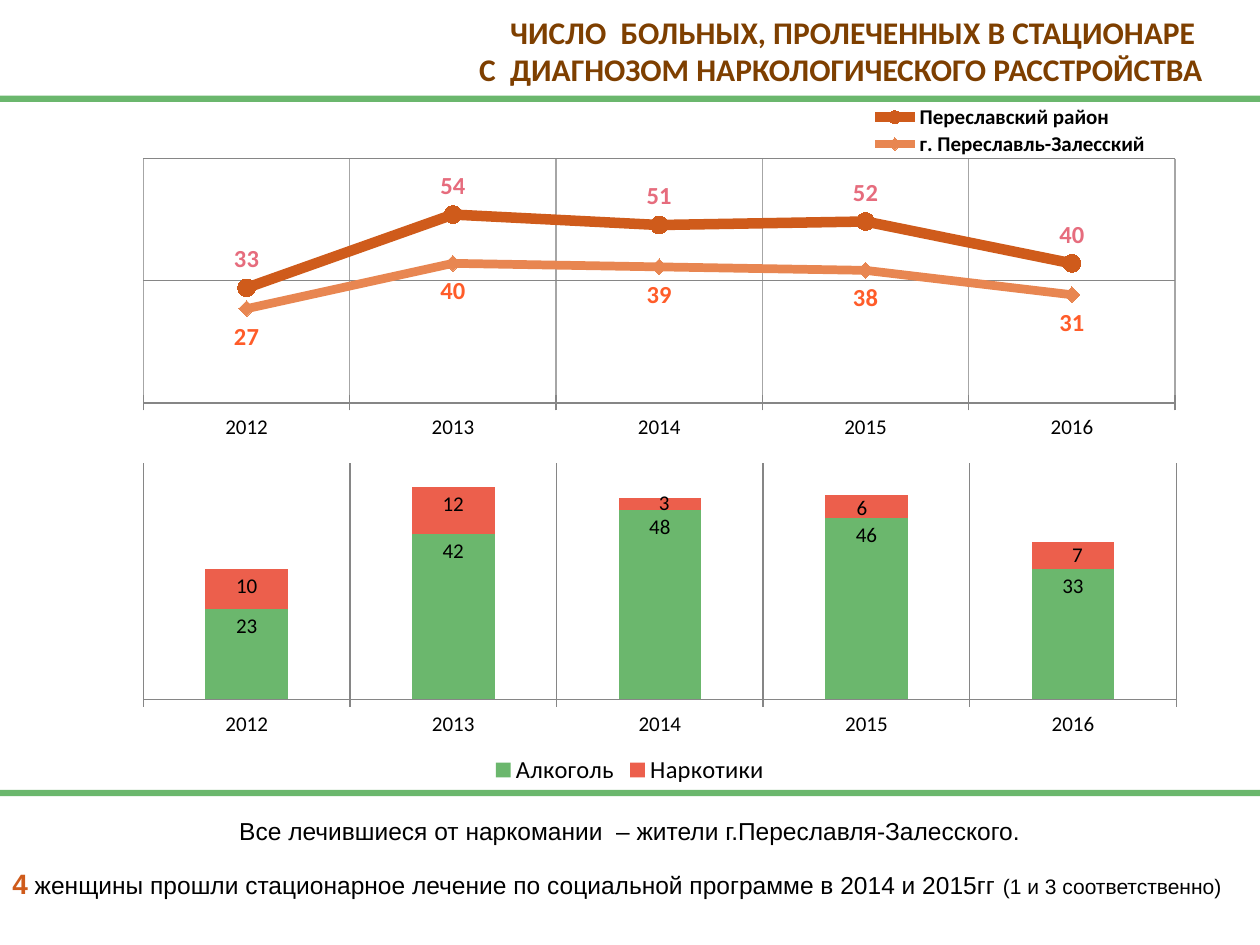
"""Builds the slide on inpatients treated for narcological disorders, 2012-2016."""
from lxml import etree
from pptx import Presentation
from pptx import util as u
from pptx.chart.data import CategoryChartData
from pptx.dml.color import RGBColor
from pptx.enum import chart as c, shapes, text
from pptx.oxml import parse_xml
from pptx.oxml.ns import nsdecls

Pt = u.Pt
GREEN, RED, GREY, BLACK = "6BB76D", "EC5F4C", "868686", "000000"
BROWN, ORANGE, PEACH = "7E3F00", "CF5B1B", "E88651"
YEARS = ["2012", "2013", "2014", "2015", "2016"]


def style(font, size, color=BLACK, bold=False, name="Calibri"):
    """Set a font's size, colour, weight and typeface."""
    font.size, font.bold, font.name = Pt(size), bold, name
    font.color.rgb = RGBColor.from_string(color)


def layout(x, y, width=None, height=None, target=None):
    """Return a manual chart layout; without a size it is an offset."""
    parts = []
    if target:
        parts.append(f'<c:layoutTarget val="{target}"/>')
    if width:
        parts.append('<c:xMode val="edge"/><c:yMode val="edge"/>')
    sizes = {"x": x, "y": y, "w": width, "h": height}
    parts += [f'<c:{key} val="{value}"/>' for key, value in sizes.items() if value is not None]
    return parse_xml(f'<c:layout {nsdecls("c")}><c:manualLayout>{"".join(parts)}</c:manualLayout></c:layout>')


presentation = Presentation()
presentation.slide_width, presentation.slide_height = Pt(720), Pt(540)
slide = presentation.slides.add_slide(presentation.slide_layouts[5])

title = slide.shapes.title
title.left, title.top, title.width, title.height = Pt(48), Pt(3.6), Pt(646.5), Pt(51)
frame = title.text_frame
frame.word_wrap = True
frame.auto_size = text.MSO_AUTO_SIZE.NONE
frame.vertical_anchor = text.MSO_ANCHOR.TOP
title_lines = ["ЧИСЛО  БОЛЬНЫХ, ПРОЛЕЧЕННЫХ В СТАЦИОНАРЕ ", "С  ДИАГНОЗОМ НАРКОЛОГИЧЕСКОГО РАССТРОЙСТВА"]
for index, line in enumerate(title_lines):
    paragraph = frame.add_paragraph() if index else frame.paragraphs[0]
    paragraph.alignment = text.PP_ALIGN.RIGHT
    paragraph.space_before = Pt(0)
    run = paragraph.add_run()
    run.text = line
    style(run.font, 18, BROWN, True)

for left, top, width in [(0, 54.7, 720), (-2.9, 451.4, 722.9)]:
    rule = slide.shapes.add_shape(shapes.MSO_SHAPE.RECTANGLE, Pt(left), Pt(top), Pt(width), Pt(3.6))
    rule.shadow.inherit = False
    rule.fill.solid()
    rule.fill.fore_color.rgb = RGBColor.from_string(GREEN)
    rule.line.fill.background()

line_series = [
    ("Переславский район", [33, 54, 51, 52, 40]),
    ("г. Переславль-Залесский", [27, 40, 39, 38, 31]),
]
column_series = [
    ("Алкоголь", [23, 42, 48, 46, 33]),
    ("Наркотики", [10, 12, 3, 6, 7]),
]
specs = [
    (c.XL_CHART_TYPE.LINE_MARKERS, line_series, (48, 49, 641.5, 244), 70, 35, "A6A6A6",
     (0.053, 0.171, 0.919, 0.572), c.XL_LEGEND_POSITION.TOP, 12, True),
    (c.XL_CHART_TYPE.COLUMN_STACKED, column_series, (36.7, 258.5, 646.5, 193), 60, 10, GREY,
     (0.07, 0.032, 0.913, 0.699), c.XL_LEGEND_POSITION.BOTTOM, 14, False),
]
charts = []
for kind, series_list, box, maximum, major, grid, plot_box, position, legend_size, bold in specs:
    data = CategoryChartData(number_format="0")
    data.categories = YEARS
    for name, values in series_list:
        data.add_series(name, values)
    chart = slide.shapes.add_chart(kind, *map(Pt, box), data).chart
    charts.append(chart)
    chart.has_title = False
    style(chart.font, 18)
    chart.has_legend = True
    chart.legend.position = position
    chart.legend.include_in_layout = False
    style(chart.legend.font, legend_size, bold=bold)

    category_axis, value_axis = chart.category_axis, chart.value_axis
    category_axis.major_tick_mark = c.XL_TICK_MARK.CROSS
    style(category_axis.tick_labels.font, 12)
    category_axis.has_major_gridlines = True
    category_axis.major_gridlines.format.line.color.rgb = RGBColor.from_string(grid)
    category_axis.major_gridlines.format.line.width = Pt(0.75)
    category_axis.format.line.color.rgb = RGBColor.from_string(GREY)
    value_axis.minimum_scale, value_axis.maximum_scale = 0, maximum
    value_axis.major_unit = major
    value_axis.visible = False
    value_axis.has_major_gridlines = False

    plot_area = chart.plots[0]._element.getparent()
    for old in plot_area.findall("c:layout", plot_area.nsmap):
        plot_area.remove(old)
    plot_area.insert(0, layout(*plot_box, target="inner"))
    chart.plots[0].vary_by_categories = False

line_chart, column_chart = charts
gridlines = line_chart.value_axis.major_gridlines.format.line
gridlines.color.rgb = RGBColor.from_string(GREY)
gridlines.width = Pt(0.75)

legend = line_chart.legend._element
for old in legend.findall("c:layout", legend.nsmap):
    legend.remove(old)
legend.insert(1, layout(0.69, 0.04, 0.27, 0.13))

line_styles = [
    (ORANGE, 6, c.XL_MARKER_STYLE.CIRCLE, 10, c.XL_LABEL_POSITION.ABOVE, "E66C7D"),
    (PEACH, 5, c.XL_MARKER_STYLE.DIAMOND, 9, c.XL_LABEL_POSITION.BELOW, "FF5C29"),
]
for series, (color, width, marker, size, position, label_color) in zip(line_chart.plots[0].series, line_styles):
    series.smooth = False
    series.format.line.color.rgb = RGBColor.from_string(color)
    series.format.line.width = Pt(width)
    series.marker.style, series.marker.size = marker, size
    series.marker.format.fill.solid()
    series.marker.format.fill.fore_color.rgb = RGBColor.from_string(color)
    series.marker.format.line.color.rgb = RGBColor.from_string(color)
    labels = series.data_labels
    labels.show_value, labels.position = True, position
    labels.number_format, labels.number_format_is_linked = "0", False
    style(labels.font, 14, label_color, True)

columns = column_chart.plots[0]
columns.overlap, columns.gap_width = 100, 150
for series, color in zip(columns.series, [GREEN, RED]):
    series.format.fill.solid()
    series.format.fill.fore_color.rgb = RGBColor.from_string(color)
    series.data_labels.show_value = True
    series.data_labels.position = c.XL_LABEL_POSITION.INSIDE_END
    style(series.data_labels.font, 12)

for index, x, y in [(2, 0.004, -0.036), (3, -0.004, -0.012), (4, 0.004, -0.012)]:
    label = columns.series[1].points[index].data_label
    label.position = c.XL_LABEL_POSITION.INSIDE_END
    style(label.font, 12)
    element = columns.series[1].data_labels._element.findall("c:dLbl", plot_area.nsmap)[-1]
    element.insert(1, layout(x, y))

notes = slide.shapes.add_textbox(Pt(0), Pt(463), Pt(720), Pt(55.4)).text_frame
notes.word_wrap = True
note_lines = [
    (text.PP_ALIGN.CENTER, [("Все лечившиеся от наркомании  – жители г.Переславля-Залесского.", 14, BLACK, False)]),
    (text.PP_ALIGN.LEFT, [
        ("4", 16, ORANGE, True),
        (" женщины прошли стационарное лечение по социальной программе в 2014 и 2015гг ", 14, BLACK, False),
        ("(1 и 3 соответственно)", 12, BLACK, False),
    ]),
]
for index, (alignment, runs) in enumerate(note_lines):
    paragraph = notes.add_paragraph() if index else notes.paragraphs[0]
    paragraph.alignment = alignment
    paragraph.space_before = paragraph.space_after = Pt(6)
    for words, size, color, bold in runs:
        run = paragraph.add_run()
        run.text = words
        style(run.font, size, color, bold, "Arial")

presentation.save("out.pptx")
